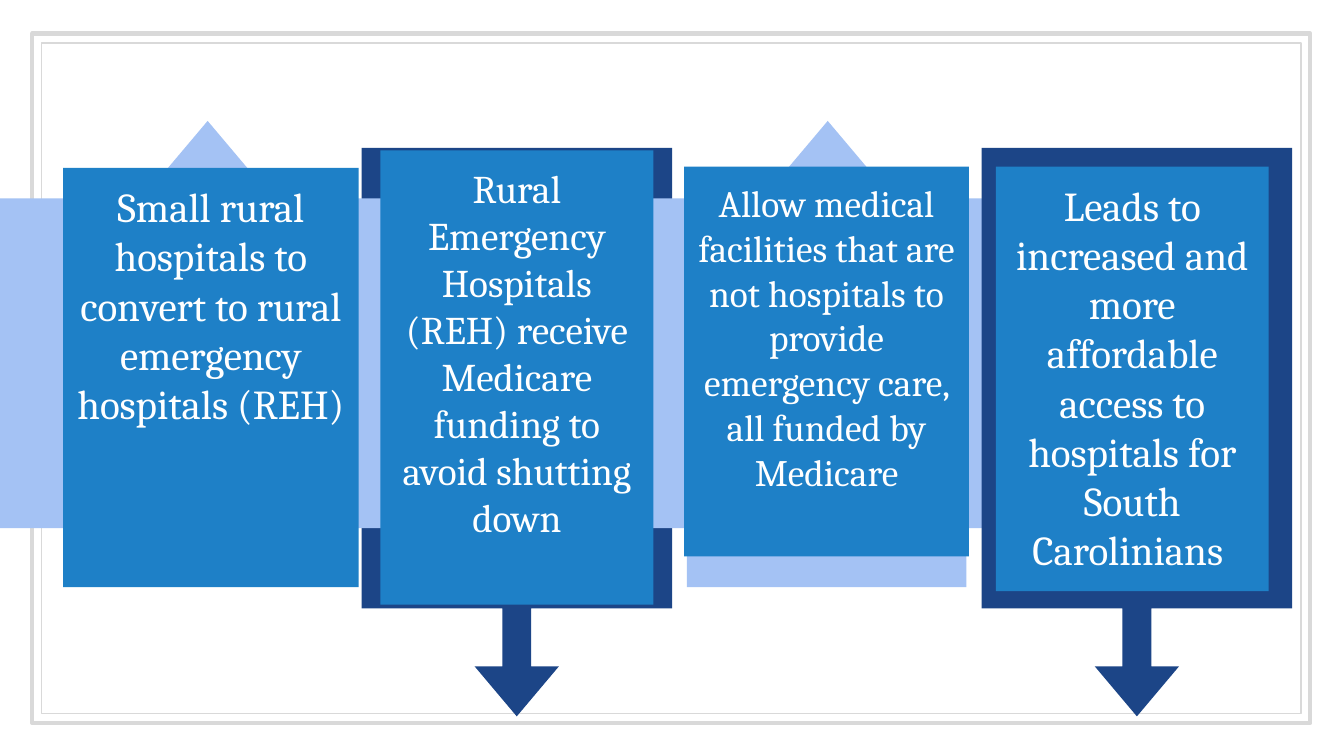
from dataclasses import dataclass

from pptx import Presentation
from pptx.dml.color import RGBColor
from pptx.enum import shapes, text
from pptx.util import Pt


@dataclass(frozen=True)
class Theme:
    font: str = "Cambria"
    ink: str = "FFFFFF"
    card: str = "1E80C7"
    dark: str = "1C4587"
    light: str = "A4C2F4"
    frame: str = "D9D9D9"
    large: float = 22
    medium: float = 21
    small: float = 20


THEME = Theme()
KIND = shapes.MSO_SHAPE
PAGE_SIZE = (720, 405)
CARD_INSET = 7.2
SPACE_BEFORE = 6
FRAME_BOX = (17.3, 18, 684.7, 369.4)
FRAME_GAP = 5
FRAME_LINES = (2.25, 0.75)
PAIR_STEP = 332.2
UP_BOX = (0, 64.8, 222.5, 218.2)
DOWN_BOX = (193.7, 79.2, 166.3, 304.6)
BACKING_BOX = (367.9, 90, 149.8, 224.6)
SHAFT_WIDTH, HEAD_HALF, HEAD_LENGTH = 15.5, 22.6, 26.8
BODY_SHARE = 0.81

CARDS = [
    ((33.8, 90, 158.4, 224.6), THEME.large,
     "Small rural hospitals to convert to rural emergency hospitals (REH)"),
    ((366.5, 89.3, 152.6, 208.8), THEME.small,
     "Allow medical facilities that are not hospitals to provide emergency care, "
     "all funded by Medicare"),
    ((203.8, 80.6, 146.2, 243.4), THEME.medium,
     "Rural Emergency Hospitals (REH) receive Medicare funding to avoid shutting down"),
    ((533.5, 89.3, 146.2, 227.5), THEME.large,
     "Leads to increased and more affordable access to hospitals for South Carolinians "),
]


def set_all(target, values):
    for name, value in values.items():
        setattr(target, name, value)


def shifted(box, distance):
    left, top, width, height = box
    return left + distance, top, width, height


def add_block(page, kind, box, fill):
    block = page.shapes.add_shape(kind, *map(Pt, box))
    block.shadow.inherit = False
    block.line.fill.background()
    if fill:
        block.fill.solid()
        block.fill.fore_color.rgb = RGBColor.from_string(fill)
    else:
        block.fill.background()
    return block


def add_frame(page, box):
    left, top, width, height = box
    for index, weight in enumerate(FRAME_LINES):
        gap = index * FRAME_GAP
        edge = add_block(page, KIND.RECTANGLE,
                         (left + gap, top + gap, width - 2 * gap, height - 2 * gap), None)
        edge.line.color.rgb = RGBColor.from_string(THEME.frame)
        edge.line.width = Pt(weight)


def add_callout(page, kind, box, fill):
    callout = add_block(page, kind, box, fill)
    short_side = min(box[2:])
    for index, length in enumerate((SHAFT_WIDTH, HEAD_HALF, HEAD_LENGTH)):
        callout.adjustments[index] = length / short_side
    callout.adjustments[3] = BODY_SHARE


def add_card(page, box, size, wording):
    card = add_block(page, KIND.RECTANGLE, box, THEME.card)
    frame = card.text_frame
    set_all(frame, {
        "word_wrap": True,
        "vertical_anchor": text.MSO_ANCHOR.TOP,
        **{f"margin_{side}": Pt(CARD_INSET) for side in ("left", "top", "right", "bottom")},
    })
    para = frame.paragraphs[0]
    set_all(para, {"alignment": text.PP_ALIGN.CENTER, "space_before": Pt(SPACE_BEFORE)})
    span = para.add_run()
    span.text = wording
    set_all(span.font, {"name": THEME.font, "size": Pt(size)})
    span.font.color.rgb = RGBColor.from_string(THEME.ink)


def add_backdrop(page):
    up, down = KIND.UP_ARROW_CALLOUT, KIND.DOWN_ARROW_CALLOUT
    add_callout(page, down, DOWN_BOX, THEME.dark)
    add_callout(page, up, shifted(UP_BOX, PAIR_STEP), THEME.light)
    add_block(page, KIND.RECTANGLE, BACKING_BOX, THEME.light)
    add_callout(page, down, shifted(DOWN_BOX, PAIR_STEP), THEME.dark)
    add_callout(page, up, UP_BOX, THEME.light)


def main():
    deck = Presentation()
    deck.slide_width, deck.slide_height = map(Pt, PAGE_SIZE)
    page = deck.slides.add_slide(deck.slide_layouts[6])
    add_frame(page, FRAME_BOX)
    add_backdrop(page)
    for box, size, wording in CARDS:
        add_card(page, box, size, wording)
    deck.save("out.pptx")


if __name__ == "__main__":
    main()
